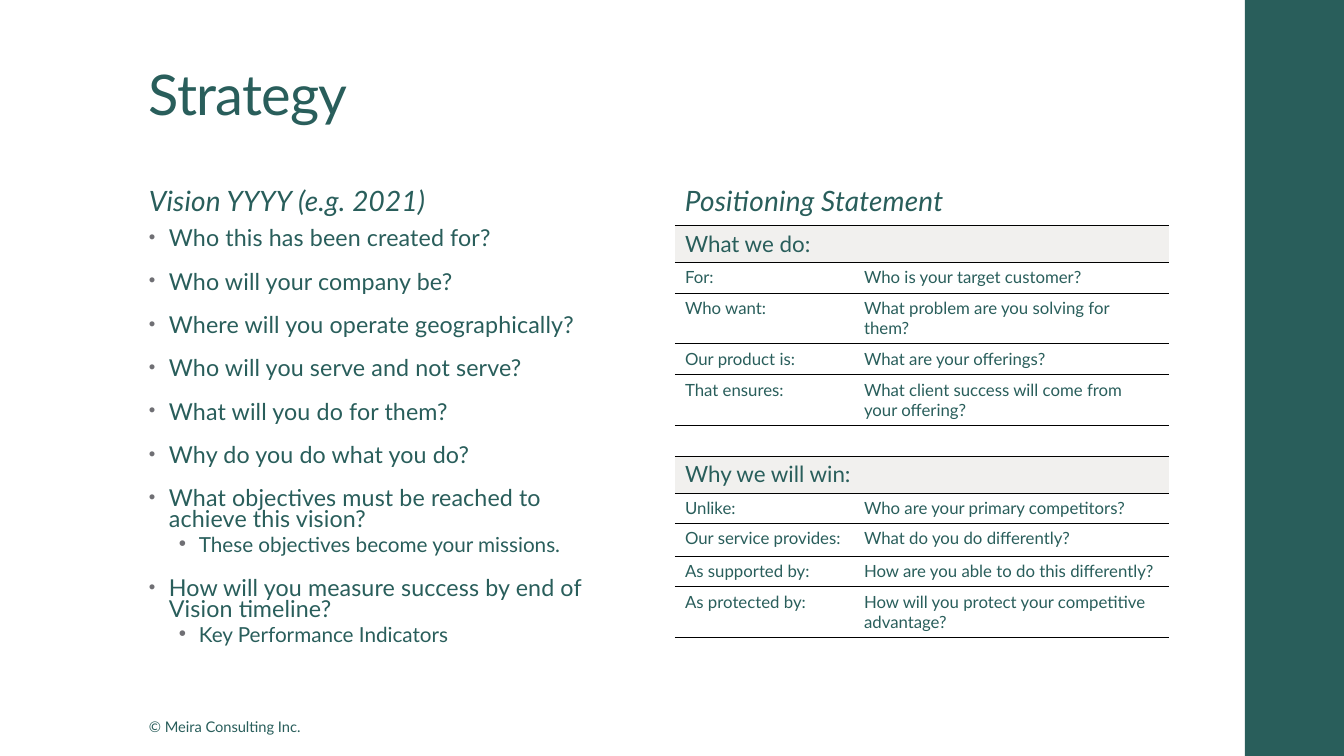
import lxml.etree
import pptx
import pptx.dml.color
import pptx.enum.shapes
import pptx.enum.text
import pptx.oxml.ns
import pptx.util

EMU_PER_PX = 914400 / 100.8
COLORS = {"green": "295E5B", "bullet": "6F6F74", "heading": "F1F0EE", "rule": "000000"}
ANCHOR = pptx.enum.text.MSO_ANCHOR

TITLE = {"size": 40, "spacing": -50}
HEADING = {"size": 20, "italic": True, "spacing": 10}
QUESTION = {"size": 16.6, "spacing": 10}
DETAIL = {"size": 14.8}
SECTION = {"size": 16}
CELL = {"size": 12}
FOOTER = {"size": 10.5}

BULLETS = [
    {
        "text": QUESTION, "left": 20, "percent": 80,
        "paragraph": {"line_spacing": 0.75, "space_before": pptx.util.Pt(14),
                      "space_after": pptx.util.Pt(2)},
    },
    {
        "text": DETAIL, "left": 50, "percent": 100,
        "paragraph": {"level": 1, "line_spacing": 0.7, "space_before": pptx.util.Pt(3),
                      "space_after": pptx.util.Pt(3)},
    },
]

VISION = [
    (0, "Who this has been created for?"),
    (0, "Who will your company be?"),
    (0, "Where will you operate geographically?"),
    (0, "Who will you serve and not serve?"),
    (0, "What will you do for them?"),
    (0, "Why do you do what you do?"),
    (0, "What objectives must be reached to achieve this vision?"),
    (1, "These objectives become your missions."),
    (0, "How will you measure success by end of Vision timeline?"),
    (1, "Key Performance Indicators"),
]

POSITIONING = [
    (37, ["What we do:"]),
    (31, ["For:", "Who is your target customer?"]),
    (50, ["Who want:", "What problem are you solving for them?"]),
    (31, ["Our product is:", "What are your offerings?"]),
    (50, ["That ensures:", "What client success will come from your offering?"]),
    (31, ["", ""]),
    (37, ["Why we will win:"]),
    (30, ["Unlike:", "Who are your primary competitors?"]),
    (33, ["Our service provides:", "What do you do differently?"]),
    (30, ["As supported by:", "How are you able to do this differently?"]),
    (50, ["As protected by:", "How will you protect your competitive advantage?"]),
]


def px(length):
    return pptx.util.Emu(round(length * EMU_PER_PX))


def color(name):
    return pptx.dml.color.RGBColor.from_string(COLORS[name])


def set_all(target, values):
    for name, value in values.items():
        setattr(target, name, value)


def add_element(parent, tag, **attributes):
    return lxml.etree.SubElement(parent, pptx.oxml.ns.qn(tag), attributes)


def write(para, text, style):
    span = para.add_run()
    span.text = text
    set_all(span.font, {"name": "Lato", "size": pptx.util.Pt(style["size"]),
                        "italic": style.get("italic", False)})
    span.font.color.rgb = color("green")
    if "spacing" in style:
        span.font._element.set("spc", str(style["spacing"]))


def add_text_box(page, box, anchor=ANCHOR.TOP, wrap=True):
    frame = page.shapes.add_textbox(*map(px, box)).text_frame
    set_all(frame, {"word_wrap": wrap, "vertical_anchor": anchor})
    return frame


def add_line(page, box, text, style, line_spacing=1.0, after=0, **frame_options):
    para = add_text_box(page, box, **frame_options).paragraphs[0]
    set_all(para, {"line_spacing": line_spacing, "space_after": pptx.util.Pt(after)})
    write(para, text, style)


def add_bullet(para, left, percent):
    properties = para._p.get_or_add_pPr()
    properties.set("marL", str(px(left)))
    properties.set("indent", str(px(-20)))
    add_element(add_element(properties, "a:buClr"), "a:srgbClr", val=COLORS["bullet"])
    add_element(properties, "a:buSzPct", val=str(percent * 1000))
    add_element(properties, "a:buFont", typeface="Arial")
    add_element(properties, "a:buChar", char="•")


def add_vision(page, box):
    frame = add_text_box(page, box)
    for index, (level, text) in enumerate(VISION):
        para = frame.add_paragraph() if index else frame.paragraphs[0]
        bullet = BULLETS[level]
        set_all(para, bullet["paragraph"])
        if index == 0:
            para.space_before = pptx.util.Pt(0)
        add_bullet(para, bullet["left"], bullet["percent"])
        write(para, text, bullet["text"])


def rule_cell(cell):
    properties = cell._tc.get_or_add_tcPr()
    for side in ("a:lnL", "a:lnR"):
        add_element(add_element(properties, side), "a:noFill")
    for side in ("a:lnT", "a:lnB"):
        line = add_element(properties, side, w=str(pptx.util.Pt(0.5)))
        add_element(add_element(line, "a:solidFill"), "a:srgbClr", val=COLORS["rule"])


def fill_cell(cell, text, is_section):
    rule_cell(cell)
    if is_section:
        cell.fill.solid()
        cell.fill.fore_color.rgb = color("heading")
    else:
        cell.fill.background()
    para = cell.text_frame.paragraphs[0]
    if text:
        write(para, text, SECTION if is_section else CELL)
    else:
        add_element(para._p, "a:endParaRPr", sz=str(CELL["size"] * 100))


def add_positioning(page, box):
    table = page.shapes.add_table(len(POSITIONING), 2, *map(px, box)).table
    set_all(table, {"first_row": False, "horz_banding": False})
    label_width = 179
    table.columns[0].width = px(label_width)
    table.columns[1].width = px(box[2] - label_width)
    for index, (height, texts) in enumerate(POSITIONING):
        table.rows[index].height = px(height)
        is_section = len(texts) == 1
        if is_section:
            table.cell(index, 0).merge(table.cell(index, 1))
        for column in range(2):
            text = texts[column] if column < len(texts) else ""
            fill_cell(table.cell(index, column), text, is_section)


def add_column(page, box, heading, add_content):
    left, top, width, height = box
    heading_height = 81
    content_top = 83
    add_line(page, (left, top, width, heading_height), heading, HEADING,
             line_spacing=0.95, after=2, anchor=ANCHOR.BOTTOM)
    add_content(page, (left, top + content_top, width, height - content_top))


def add_side_band(page, box):
    band = page.shapes.add_shape(pptx.enum.shapes.MSO_SHAPE.RECTANGLE, *map(px, box))
    band.shadow.inherit = False
    band.fill.solid()
    band.fill.fore_color.rgb = color("green")
    band.line.fill.background()


def add_strategy_slide(deck, box):
    left, top, width, height = box
    page = deck.slides.add_slide(deck.slide_layouts[6])
    text_left = left + 139
    add_side_band(page, (left + width - 99, top, 99, height))
    add_line(page, (text_left, top + 713, 173, 28), "© Meira Consulting Inc.", FOOTER, wrap=False)
    add_line(page, (text_left, top + 41, 1068, 92), "Strategy", TITLE,
             line_spacing=0.9, anchor=ANCHOR.BOTTOM)
    add_column(page, (text_left, top + 142, 494, 538), "Vision YYYY (e.g. 2021)", add_vision)
    add_column(page, (left + 675, top + 142, 494, 493), "Positioning Statement", add_positioning)


def main():
    deck = pptx.Presentation()
    set_all(deck, {"slide_width": px(1344), "slide_height": px(756)})
    add_strategy_slide(deck, (0, 0, 1344, 756))
    deck.save("out.pptx")


if __name__ == "__main__":
    main()
